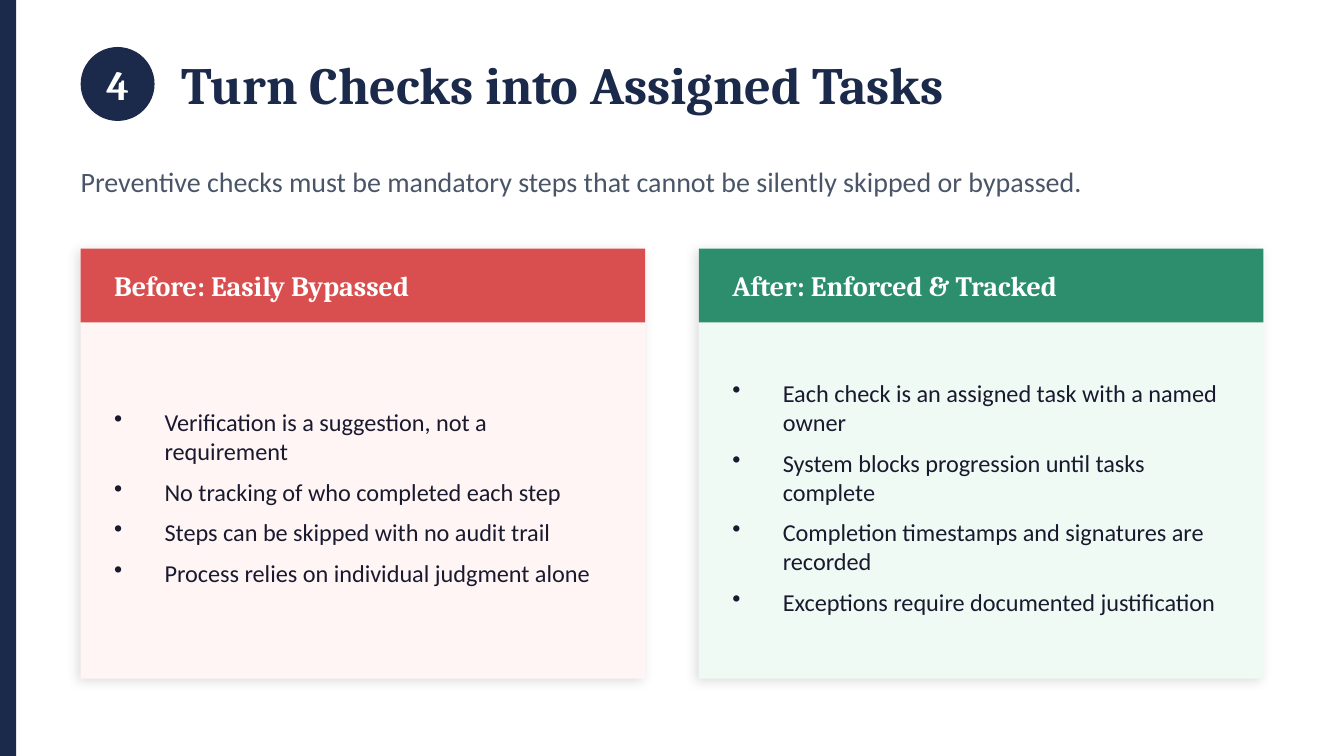
from lxml import etree
from pptx import Presentation
from pptx.dml.color import RGBColor
from pptx.enum.shapes import MSO_SHAPE
from pptx.enum.text import MSO_ANCHOR, MSO_AUTO_SIZE, PP_ALIGN
from pptx.oxml.ns import qn
from pptx.util import Emu, Pt

RECTANGLE = MSO_SHAPE.RECTANGLE
OVAL = MSO_SHAPE.OVAL
MIDDLE = MSO_ANCHOR.MIDDLE
NO_AUTOFIT = MSO_AUTO_SIZE.NONE
LEFT = PP_ALIGN.LEFT
CENTER = PP_ALIGN.CENTER

NAVY = RGBColor(0x1B, 0x2A, 0x4A)
SLATE = RGBColor(0x4A, 0x55, 0x68)
INK = RGBColor(0x1A, 0x1A, 0x2E)
WHITE = RGBColor(0xFF, 0xFF, 0xFF)
RED = RGBColor(0xD9, 0x4F, 0x4F)
PALE_RED = RGBColor(0xFF, 0xF5, 0xF5)
GREEN = RGBColor(0x2D, 0x8E, 0x6E)
PALE_GREEN = RGBColor(0xF0, 0xFA, 0xF5)

HEADING_FONT = "Cambria"
BODY_FONT = "Calibri"
EMU_PER_PX = 4572  # 200 px to the inch
SLIDE_WIDTH, SLIDE_HEIGHT = 2000, 1125
MARGIN = 120
CARD_TOP, CARD_WIDTH, CARD_HEIGHT, CARD_GAP = 370, 840, 640, 80
HEADER_HEIGHT = 110
CARD_PADDING = 50
LIST_PADDING = 40
BULLET_INDENT = 75

CARDS = [
    ("Before: Easily Bypassed", RED, PALE_RED, [
        "Verification is a suggestion, not a requirement",
        "No tracking of who completed each step",
        "Steps can be skipped with no audit trail",
        "Process relies on individual judgment alone",
    ]),
    ("After: Enforced & Tracked", GREEN, PALE_GREEN, [
        "Each check is an assigned task with a named owner",
        "System blocks progression until tasks complete",
        "Completion timestamps and signatures are recorded",
        "Exceptions require documented justification",
    ]),
]


def px(length):
    return Emu(length * EMU_PER_PX)


class SlideBuilder:
    def __init__(self, presentation):
        self.slide = presentation.slides.add_slide(presentation.slide_layouts[5])

    def shape(self, kind, left, top, width, height, color):
        shape = self.slide.shapes.add_shape(
            kind, px(left), px(top), px(width), px(height))
        shape.shadow.inherit = False
        shape.fill.solid()
        shape.fill.fore_color.rgb = color
        shape.line.fill.background()
        return shape

    def add_shadow(self, shape):
        """Put a soft black shadow, 12 % opaque, on the shape."""
        effects = shape._element.spPr.find(qn("a:effectLst"))
        shadow = etree.SubElement(
            effects, qn("a:outerShdw"), blurRad=str(Pt(6)), dist=str(Pt(2)),
            dir=str(135 * 60000), algn="bl", rotWithShape="0")
        color = etree.SubElement(shadow, qn("a:srgbClr"), val="000000")
        etree.SubElement(color, qn("a:alpha"), val="12000")

    def format_text(self, shape, text, size, color, font, bold, align):
        frame = shape.text_frame
        frame.text = text
        frame.word_wrap = True
        frame.auto_size = NO_AUTOFIT
        frame.vertical_anchor = MIDDLE
        frame.margin_left = frame.margin_right = 0
        frame.margin_top = frame.margin_bottom = 0
        for paragraph in frame.paragraphs:
            paragraph.alignment = align
            for run in paragraph.runs:
                run.font.name = font
                run.font.size = Pt(size)
                run.font.bold = bold
                run.font.color.rgb = color

    def title(self, text, left, top, width, height):
        title = self.slide.shapes.title
        title.left, title.top = px(left), px(top)
        title.width, title.height = px(width), px(height)
        self.format_text(title, text, 28, NAVY, HEADING_FONT, True, LEFT)

    def text(self, text, left, top, width, height, size, color,
             font=BODY_FONT, bold=False, align=LEFT):
        box = self.slide.shapes.add_textbox(
            px(left), px(top), px(width), px(height))
        self.format_text(box, text, size, color, font, bold, align)
        return box

    def bullets(self, items, left, top, width, height):
        box = self.text("\n".join(items), left, top, width, height, 13, INK)
        paragraphs = box.text_frame.paragraphs
        for paragraph in paragraphs:
            properties = paragraph._p.get_or_add_pPr()
            properties.set("marL", str(px(BULLET_INDENT)))
            properties.set("indent", str(-px(BULLET_INDENT)))
            etree.SubElement(properties, qn("a:buChar"), char="•")
        for paragraph in paragraphs[:-1]:
            paragraph.space_after = Pt(6)

    def card(self, left, heading, color, pale_color, items):
        body = self.shape(
            RECTANGLE, left, CARD_TOP, CARD_WIDTH, CARD_HEIGHT, pale_color)
        self.add_shadow(body)
        self.shape(RECTANGLE, left, CARD_TOP, CARD_WIDTH, HEADER_HEIGHT, color)
        text_left = left + CARD_PADDING
        text_width = CARD_WIDTH - 2 * CARD_PADDING
        self.text(heading, text_left, CARD_TOP, text_width, HEADER_HEIGHT,
                  15, WHITE, HEADING_FONT, True)
        self.bullets(items, text_left, CARD_TOP + HEADER_HEIGHT + LIST_PADDING,
                     text_width, CARD_HEIGHT - HEADER_HEIGHT - 2 * LIST_PADDING - 10)


def main():
    presentation = Presentation()
    presentation.slide_width = px(SLIDE_WIDTH)
    presentation.slide_height = px(SLIDE_HEIGHT)
    builder = SlideBuilder(presentation)

    builder.shape(RECTANGLE, 0, 0, 24, SLIDE_HEIGHT, NAVY)
    badge = (MARGIN, 70, 110, 110)
    builder.shape(OVAL, *badge, NAVY)
    builder.text("4", *badge, 22, WHITE, HEADING_FONT, True, CENTER)
    builder.title("Turn Checks into Assigned Tasks", 270, 60, 1600, 130)
    builder.text(
        "Preventive checks must be mandatory steps that cannot be silently "
        "skipped or bypassed.",
        MARGIN, 230, SLIDE_WIDTH - 2 * MARGIN, 80, 15, SLATE)

    for index, card in enumerate(CARDS):
        builder.card(MARGIN + index * (CARD_WIDTH + CARD_GAP), *card)

    presentation.save("out.pptx")


if __name__ == "__main__":
    main()
